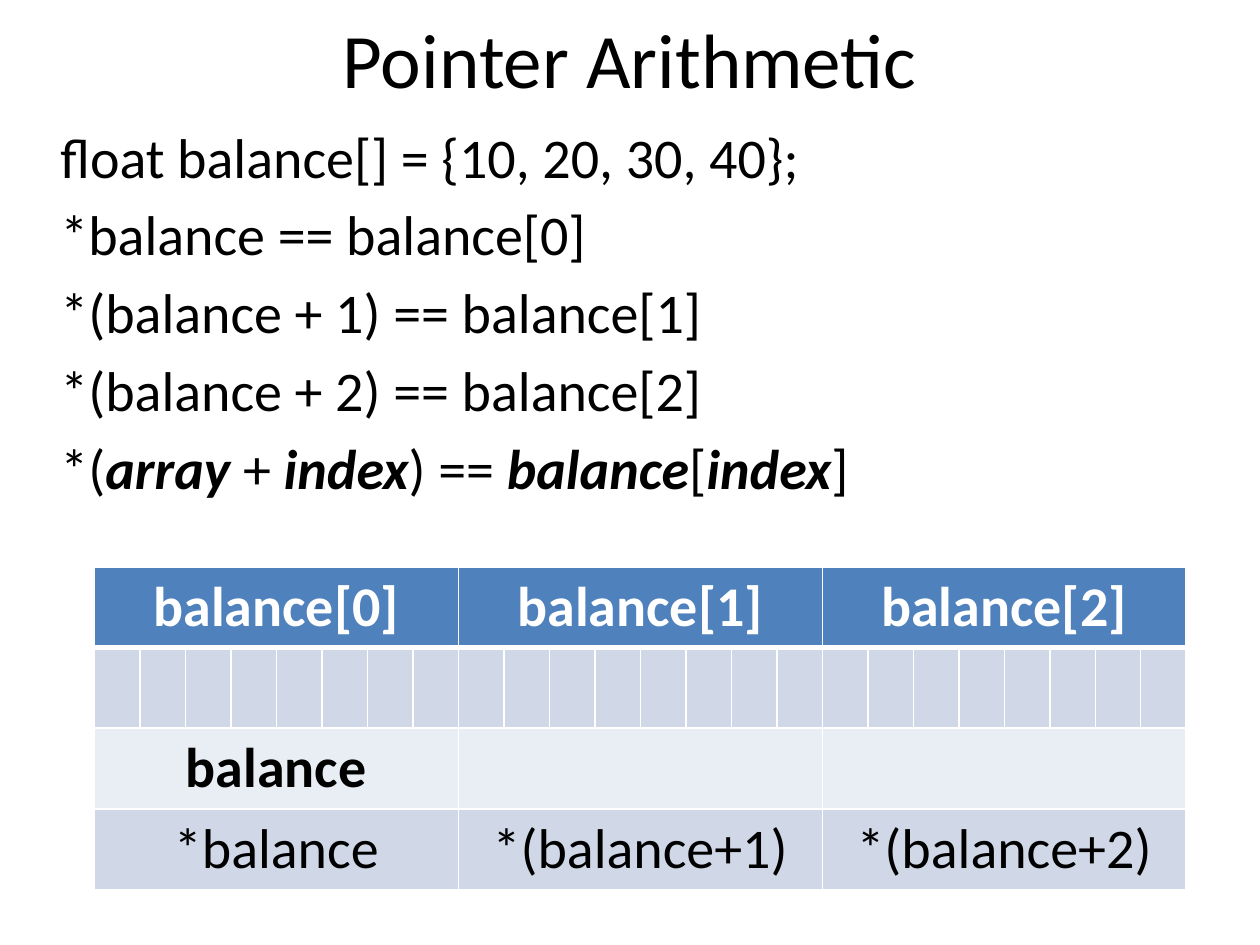
from dataclasses import dataclass

from lxml import etree
from pptx import Presentation
from pptx.dml.color import RGBColor
from pptx.enum.text import MSO_ANCHOR, PP_ALIGN
from pptx.oxml.ns import qn
from pptx.util import Inches, Pt

CENTER = PP_ALIGN.CENTER
MIDDLE = MSO_ANCHOR.MIDDLE
FONT_NAME = "Calibri"
BODY_SIZE = 32
COLORS = {
    "text": "000000",
    "header_text": "FFFFFF",
    "header": "4F81BD",
    "band": "D0D8E8",
    "light_band": "E9EDF4",
    "border": "FFFFFF",
}
BYTES_PER_ELEMENT = 8
ELEMENTS = 3
BLANK_LAYOUT = 6

# Every second piece of a line is an emphasised variable name.
CODE_LINES = [
    ["float balance[] = {10, 20, 30, 40};"],
    ["*balance == balance[0]"],
    ["*(balance + 1) == balance[1]"],
    ["*(balance + 2) == balance[2]"],
    ["*(", "array", " + ", "index", ") == ", "balance", "[", "index", "]"],
]


@dataclass
class MemoryRow:
    labels: list[str]
    fill: str
    text_color: str = "text"
    bold: bool = False
    merged: bool = True


MEMORY_ROWS = [
    MemoryRow([f"balance[{i}]" for i in range(ELEMENTS)], "header", "header_text", True),
    MemoryRow([""] * ELEMENTS * BYTES_PER_ELEMENT, "band", merged=False),
    MemoryRow(["balance", "", ""], "light_band", bold=True),
    MemoryRow(["*balance", "*(balance+1)", "*(balance+2)"], "band"),
]


def color(name: str) -> RGBColor:
    return RGBColor.from_string(COLORS[name])


def style_paragraph(paragraph, size: float, color_name: str = "text") -> None:
    paragraph.font.name = FONT_NAME
    paragraph.font.size = Pt(size)
    paragraph.font.color.rgb = color(color_name)


def add_text_frame(slide, top: float, height: float):
    """Add a wrapping text box across the whole slide width."""
    box = slide.shapes.add_textbox(Inches(0), Inches(top), Inches(10), Inches(height))
    box.text_frame.word_wrap = True
    return box.text_frame


def add_title(slide, text: str) -> None:
    frame = add_text_frame(slide, 0, 0.92)
    frame.vertical_anchor = MIDDLE
    paragraph = frame.paragraphs[0]
    paragraph.text = text
    paragraph.alignment = CENTER
    style_paragraph(paragraph, 44)


def add_code(slide, lines: list[list[str]]) -> None:
    frame = add_text_frame(slide, 0.92, 6.58)
    frame.margin_left = Inches(0.48)
    for line_index, pieces in enumerate(lines):
        paragraph = frame.paragraphs[0] if line_index == 0 else frame.add_paragraph()
        paragraph.space_before = Pt(6)
        style_paragraph(paragraph, BODY_SIZE)
        for piece_index, piece in enumerate(pieces):
            run = paragraph.add_run()
            run.text = piece
            if piece_index % 2:
                run.font.bold = run.font.italic = True


def set_borders(cell, top: float, bottom: float) -> None:
    """Draw all four cell borders, with widths in points; the sides are 1 point."""
    properties = cell._tc.get_or_add_tcPr()
    widths = {"a:lnL": 1, "a:lnR": 1, "a:lnT": top, "a:lnB": bottom}
    for position, (tag, width) in enumerate(widths.items()):
        line = etree.Element(qn(tag), w=str(Pt(width)))
        fill = etree.SubElement(line, qn("a:solidFill"))
        etree.SubElement(fill, qn("a:srgbClr"), val=COLORS["border"])
        properties.insert(position, line)


def add_memory_table(slide, rows: list[MemoryRow]) -> None:
    column_count = ELEMENTS * BYTES_PER_ELEMENT
    width, row_height = Inches(8.67), Inches(0.64)
    table = slide.shapes.add_table(
        len(rows), column_count, Inches(0.75), Inches(4.5), width, row_height * len(rows)
    ).table
    for column in table.columns:
        column.width = width // column_count

    for row_index, row in enumerate(rows):
        for column_index in range(column_count):
            cell = table.cell(row_index, column_index)
            cell.fill.solid()
            cell.fill.fore_color.rgb = color(row.fill)
            set_borders(cell, 3 if row_index == 1 else 1, 3 if row_index == 0 else 1)
        span = BYTES_PER_ELEMENT if row.merged else 1
        for label_index, label in enumerate(row.labels):
            first = label_index * span
            cell = table.cell(row_index, first)
            if row.merged:
                cell.merge(table.cell(row_index, first + span - 1))
            paragraph = cell.text_frame.paragraphs[0]
            paragraph.alignment = CENTER
            style_paragraph(paragraph, BODY_SIZE, row.text_color)
            paragraph.font.bold = row.bold
            if label:
                paragraph.add_run().text = label


def main() -> None:
    presentation = Presentation()
    presentation.slide_width = Inches(10)
    presentation.slide_height = Inches(7.5)
    slide = presentation.slides.add_slide(presentation.slide_layouts[BLANK_LAYOUT])
    add_title(slide, "Pointer Arithmetic")
    add_code(slide, CODE_LINES)
    add_memory_table(slide, MEMORY_ROWS)
    presentation.save("out.pptx")


if __name__ == "__main__":
    main()
